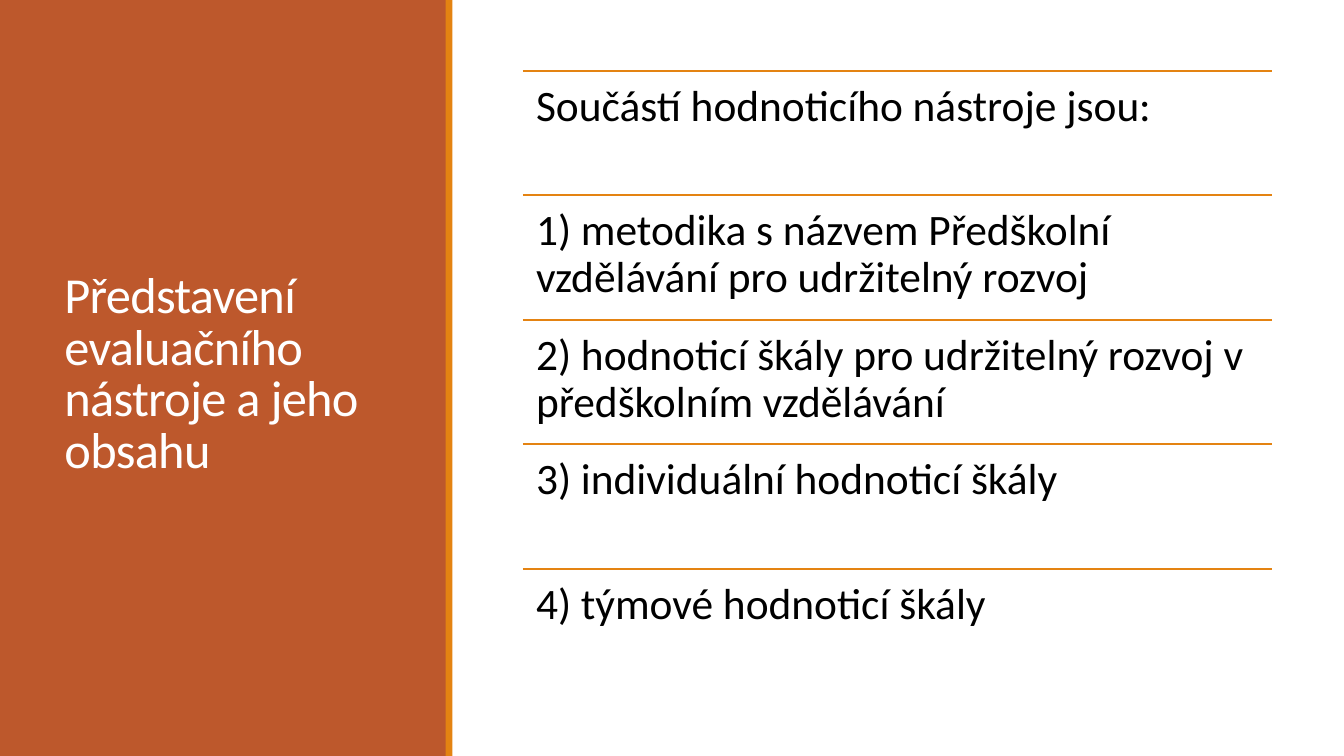
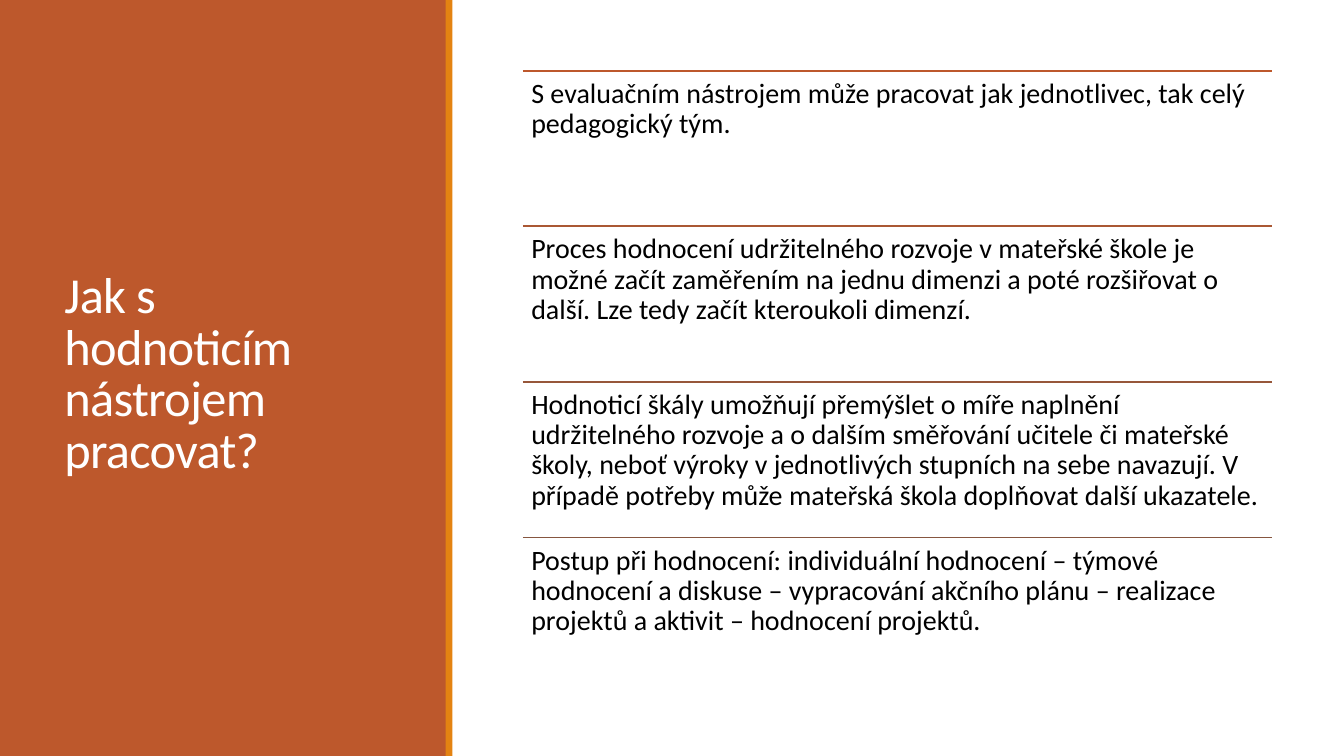
from dataclasses import dataclass

from lxml import etree
from pptx import Presentation
from pptx.dml.color import RGBColor
from pptx.enum.shapes import MSO_CONNECTOR, MSO_SHAPE
from pptx.enum.text import MSO_ANCHOR, MSO_AUTO_SIZE, PP_ALIGN
from pptx.oxml.ns import qn
from pptx.util import Cm, Pt

RECT = MSO_SHAPE.RECTANGLE
LINE = MSO_CONNECTOR.STRAIGHT
LEFT = PP_ALIGN.LEFT
TOP, MID = MSO_ANCHOR.TOP, MSO_ANCHOR.MIDDLE
FIXED = MSO_AUTO_SIZE.NONE
TITLE_ONLY = 5
WIDE, HIGH = Cm(33.87), Cm(19.05)


@dataclass(frozen=True)
class Theme:
    font: str = "Calibri"
    rust: str = "BD582C"
    gold: str = "E48312"
    clay: str = "AA5834"
    brown: str = "97573A"
    umber: str = "865640"
    white: str = "FFFFFF"
    black: str = "000000"
    head: int = 36
    large: int = 31
    small: int = 20
    rule: float = 1.25


class Deck:
    def __init__(self, theme):
        self.theme = theme
        self.file = Presentation()
        self.file.slide_width, self.file.slide_height = WIDE, HIGH
        self.slide = None

    def page(self, title):
        layout = self.file.slide_layouts[TITLE_ONLY]
        self.slide = self.file.slides.add_slide(layout)
        self.band(Cm(0), Cm(11.25), self.theme.rust)
        self.band(Cm(11.23), Cm(0.17), self.theme.gold)
        self.title(title)

    def band(self, left, width, color):
        band = self.slide.shapes.add_shape(RECT, left, Cm(0), width, HIGH)
        band.shadow.inherit = False
        band.fill.solid()
        band.fill.fore_color.rgb = RGBColor.from_string(color)
        band.line.fill.background()

    def title(self, text):
        box = self.slide.shapes.title
        box.left, box.top, box.width, box.height = Cm(1.37), Cm(1.45), Cm(8.56), Cm(16.03)
        self.style(box.text_frame, text, self.theme.head, self.theme.white, 0.85, MID)
        for props in box.element.iter(qn("a:rPr")):
            props.set("spc", "-50")
        box.element.getparent().append(box.element)

    def style(self, frame, text, size, color, space, anchor):
        frame.text = text
        frame.word_wrap = True
        frame.auto_size = FIXED
        frame.vertical_anchor = anchor
        par = frame.paragraphs[0]
        par.alignment = LEFT
        par.line_spacing = space
        for run in par.runs:
            run.font.name = self.theme.font
            run.font.size = Pt(size)
            run.font.color.rgb = RGBColor.from_string(color)

    def rule(self, left, top, width, color):
        rule = self.slide.shapes.add_connector(LINE, left, top, left + width, top)
        rule.line.color.rgb = RGBColor.from_string(color)
        rule.line.width = Pt(self.theme.rule)
        etree.SubElement(rule.element.spPr, qn("a:effectLst"))

    def text(self, left, top, width, height, text, size, inset):
        frame = self.slide.shapes.add_textbox(left, top, width, height).text_frame
        frame.margin_left = frame.margin_right = inset
        frame.margin_top = frame.margin_bottom = inset
        self.style(frame, text, size, self.theme.black, 0.9, TOP)

    def rows(self, items, colors, size, inset):
        left, top, width = Cm(13.18), Cm(1.78), Cm(18.87)
        step = Cm(15.69) // len(items)
        for i, (item, color) in enumerate(zip(items, colors)):
            y = top + i * step
            self.rule(left, y, width, color)
            self.text(left, y, width, step, item, size, inset)


def main():
    theme = Theme()
    deck = Deck(theme)

    deck.page("Představení evaluačního nástroje a jeho obsahu")
    parts = [
        "Součástí hodnoticího nástroje jsou:",
        "1) metodika s názvem Předškolní vzdělávání pro udržitelný rozvoj",
        "2) hodnoticí škály pro udržitelný rozvoj v předškolním vzdělávání",
        "3) individuální hodnoticí škály",
        "4) týmové hodnoticí škály",
    ]
    deck.rows(parts, [theme.gold] * len(parts), theme.large, Cm(0.33))

    deck.page("Jak s hodnoticím nástrojem pracovat?")
    steps = [
        "S evaluačním nástrojem může pracovat jak jednotlivec, tak celý pedagogický tým.",
        "Proces hodnocení udržitelného rozvoje v mateřské škole je možné začít zaměřením "
        "na jednu dimenzi a poté rozšiřovat o další. Lze tedy začít kteroukoli dimenzí.",
        "Hodnoticí škály umožňují přemýšlet o míře naplnění udržitelného rozvoje a o dalším "
        "směřování učitele či mateřské školy, neboť výroky v jednotlivých stupních na sebe "
        "navazují. V případě potřeby může mateřská škola doplňovat další ukazatele.",
        "Postup při hodnocení: individuální hodnocení – týmové hodnocení a diskuse – "
        "vypracování akčního plánu – realizace projektů a aktivit – hodnocení projektů.",
    ]
    shades = [theme.rust, theme.clay, theme.brown, theme.umber]
    deck.rows(steps, shades, theme.small, Cm(0.21))

    deck.file.save("out.pptx")


if __name__ == "__main__":
    main()
